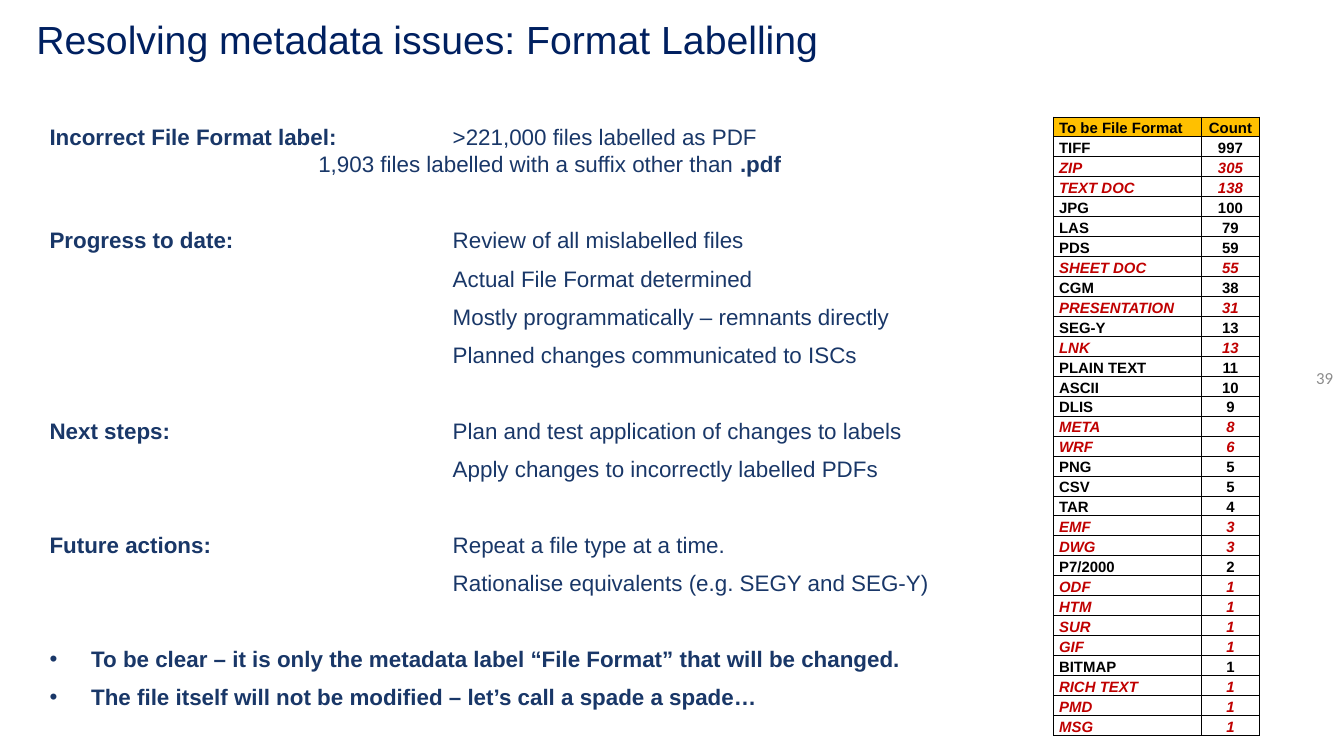
"""Build the slide on resolving file format labels."""
from lxml.etree import SubElement
from pptx import Presentation
from pptx.dml.color import RGBColor
from pptx.enum.text import MSO_ANCHOR, PP_ALIGN
from pptx.oxml.ns import qn
from pptx.util import Inches, Pt

NAVY = RGBColor(0x00, 0x20, 0x60)
BLUE = RGBColor(0x19, 0x37, 0x68)
GREY = RGBColor(0x8C, 0x8C, 0x8C)
BLACK = RGBColor(0x00, 0x00, 0x00)
RED = RGBColor(0xC0, 0x00, 0x00)
AMBER = RGBColor(0xFF, 0xC0, 0x00)


def add_text(paragraph, text, color, **formats):
    run = paragraph.add_run()
    run.text = text
    run.font.color.rgb = color
    for name, value in ({"name": "Arial"} | formats).items():
        setattr(run.font, name, value)


def add_frame(left, top, width, height, **formats):
    frame = slide.shapes.add_textbox(
        Inches(left), Inches(top), Inches(width), Inches(height)
    ).text_frame
    for name, value in ({"word_wrap": True} | formats).items():
        setattr(frame, name, value)
    return frame


prs = Presentation()
prs.slide_width, prs.slide_height = Inches(10), Inches(10) * 9 // 16
slide = prs.slides.add_slide(prs.slide_layouts[6])

page_number = add_frame(
    9.31, 2.63, 0.68, 0.36, vertical_anchor=MSO_ANCHOR.MIDDLE,
    margin_left=Inches(0.07), margin_right=Inches(0.07),
    margin_top=Inches(0.04), margin_bottom=Inches(0.04),
).paragraphs[0]
page_number.alignment = PP_ALIGN.RIGHT
add_text(page_number, "39", GREY, name="Calibri", size=Pt(9))

title = add_frame(0.27, 0.15, 6.81, 0.41, margin_left=0, margin_top=0).paragraphs[0]
title.line_spacing = 0.9
add_text(title, "Resolving metadata issues: Format Labelling", NAVY, size=Pt(21))

sections = [
    ("Incorrect File Format label:", [">221,000 files labelled as PDF"]),
    ("Progress to date:", [
        "Review of all mislabelled files",
        "Actual File Format determined",
        "Mostly programmatically – remnants directly",
        "Planned changes communicated to ISCs",
    ]),
    ("Next steps:", [
        "Plan and test application of changes to labels",
        "Apply changes to incorrectly labelled PDFs",
    ]),
    ("Future actions:", [
        "Repeat a file type at a time.",
        "Rationalise equivalents (e.g. SEGY and SEG-Y)",
    ]),
]
clarifications = [
    "To be clear – it is only the metadata label “File Format” that will be changed.",
    "The file itself will not be modified – let’s call a spade a spade…",
]
LINE_GAP, SECTION_GAP = Pt(6), Pt(26.4)

plan = add_frame(0.27, 0.87, 7.45, 4.51)
for section, (label, items) in enumerate(sections):
    for row, item in enumerate(items):
        first = section == row == 0
        entry = plan.paragraphs[0] if first else plan.add_paragraph()
        tabs = SubElement(entry._p.get_or_add_pPr(), qn("a:tabLst"))
        for stop in (2, 3) if first else (3,):
            SubElement(tabs, qn("a:tab"), pos=str(Inches(stop)), algn="l")
        if not first:
            entry.space_before = LINE_GAP if row else SECTION_GAP
        if row == 0:
            add_text(entry, label, BLUE, size=Pt(12), bold=True)
        add_text(entry, "\t" + item, BLUE, size=Pt(12))
        if first:
            entry.add_line_break()
            add_text(entry, "\t1,903 files labelled with a suffix other than ",
                     BLUE, size=Pt(12))
            add_text(entry, ".pdf", BLUE, size=Pt(12), bold=True)

for row, clarification in enumerate(clarifications):
    entry = plan.add_paragraph()
    properties = entry._p.get_or_add_pPr()
    properties.set("marL", str(Inches(0.31)))
    properties.set("indent", str(-Inches(0.31)))
    SubElement(properties, qn("a:buFont"), typeface="Arial")
    SubElement(properties, qn("a:buChar"), char="•")
    entry.space_before = LINE_GAP if row else SECTION_GAP
    add_text(entry, clarification, BLUE, size=Pt(12), bold=True)

format_counts = [
    ("To be File Format", "Count"), ("TIFF", 997), ("ZIP", 305), ("TEXT DOC", 138),
    ("JPG", 100), ("LAS", 79), ("PDS", 59), ("SHEET DOC", 55), ("CGM", 38),
    ("PRESENTATION", 31), ("SEG-Y", 13), ("LNK", 13), ("PLAIN TEXT", 11),
    ("ASCII", 10), ("DLIS", 9), ("META", 8), ("WRF", 6), ("PNG", 5), ("CSV", 5),
    ("TAR", 4), ("EMF", 3), ("DWG", 3), ("P7/2000", 2), ("ODF", 1), ("HTM", 1),
    ("SUR", 1), ("GIF", 1), ("BITMAP", 1), ("RICH TEXT", 1), ("PMD", 1), ("MSG", 1),
]
flagged = {
    "ZIP", "TEXT DOC", "SHEET DOC", "PRESENTATION", "LNK", "META", "WRF", "EMF",
    "DWG", "ODF", "HTM", "SUR", "GIF", "RICH TEXT", "PMD", "MSG",
}
cell_format = {
    "vertical_anchor": MSO_ANCHOR.BOTTOM, "margin_right": Inches(0.01),
    "margin_top": Inches(0.01), "margin_bottom": 0,
}
TABLE_HEIGHT = 4.61
counts = slide.shapes.add_table(
    len(format_counts), 2, Inches(7.84), Inches(0.87), Inches(1.53), Inches(TABLE_HEIGHT)
).table
counts.first_row = counts.horz_banding = False
for column, width in zip(counts.columns, (1.1, 0.43)):
    column.width = Inches(width)
for row, values in enumerate(format_counts):
    counts.rows[row].height = Inches(TABLE_HEIGHT / len(format_counts))
    is_flagged = values[0] in flagged
    for column, value in enumerate(values):
        cell = counts.cell(row, column)
        for name, setting in cell_format.items():
            setattr(cell, name, setting)
        cell.margin_left = Inches(0.01 if column else 0.04)
        for side in ("lnL", "lnR", "lnT", "lnB"):
            border = SubElement(cell._tc.get_or_add_tcPr(), qn(f"a:{side}"),
                                w=str(Pt(0.5)))
            SubElement(SubElement(border, qn("a:solidFill")), qn("a:srgbClr"),
                       val=str(BLACK))
        if row == 0:
            cell.fill.solid()
            cell.fill.fore_color.rgb = AMBER
        else:
            cell.fill.background()
        entry = cell.text_frame.paragraphs[0]
        entry.alignment = PP_ALIGN.CENTER if column else PP_ALIGN.LEFT
        add_text(entry, str(value), RED if is_flagged else BLACK,
                 size=Pt(8), bold=True, italic=is_flagged)

prs.save("out.pptx")
